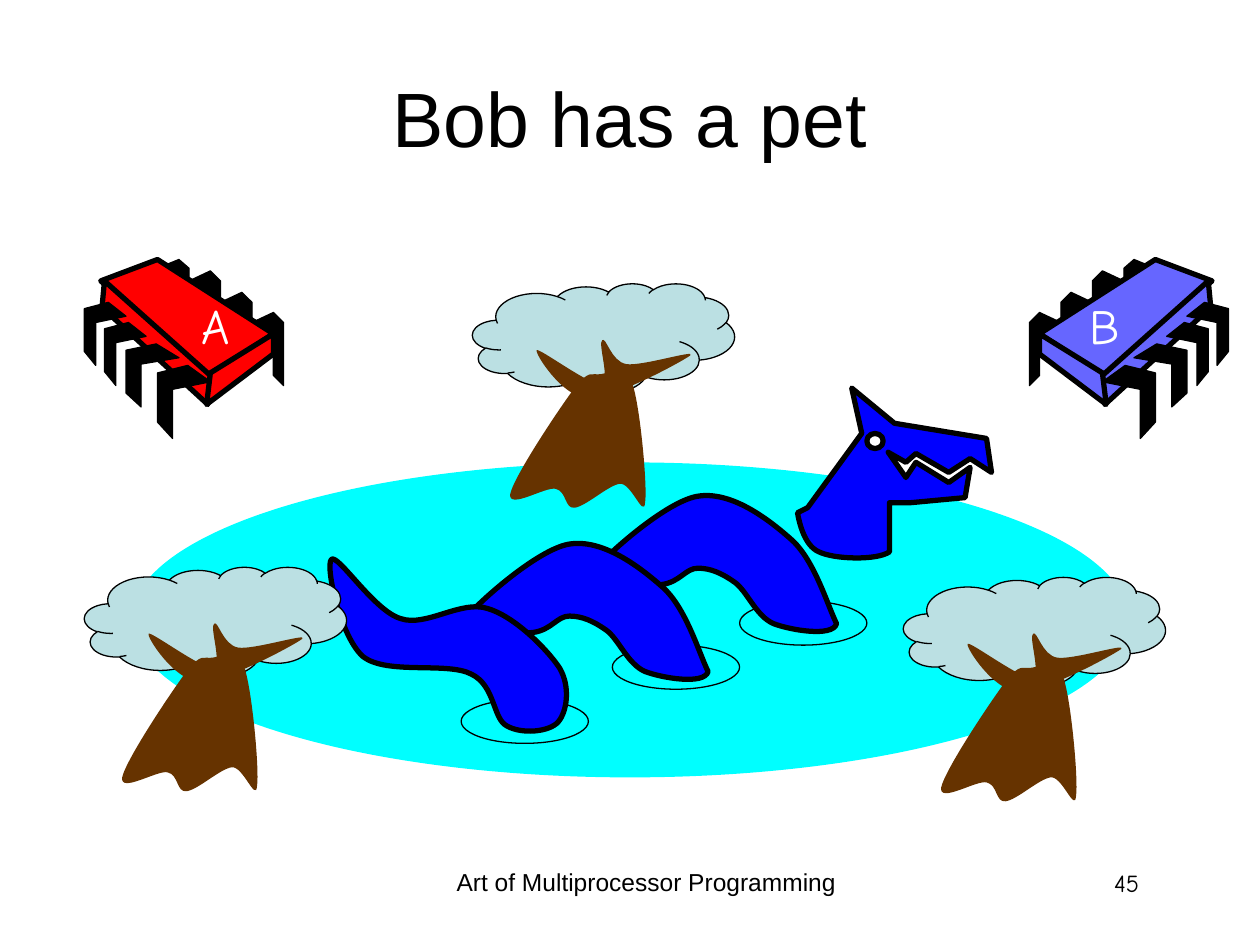
import pptx
import pptx.util
import pptx.dml.color
import pptx.enum.shapes
import pptx.enum.text
import pptx.oxml.ns

RGB = pptx.dml.color.RGBColor
BLACK = RGB(0x00, 0x00, 0x00)
WHITE = RGB(0xFF, 0xFF, 0xFF)
RED = RGB(0xFF, 0x00, 0x00)
VIOLET = RGB(0x66, 0x66, 0xFF)
CYAN = RGB(0x00, 0xFF, 0xFF)
BLUE = RGB(0x00, 0x00, 0xFF)
LEAF = RGB(0xBB, 0xE0, 0xE3)
BARK = RGB(0x66, 0x33, 0x00)

KIND = pptx.enum.shapes.MSO_SHAPE
ALIGN = pptx.enum.text.PP_ALIGN
FIT = pptx.enum.text.MSO_AUTO_SIZE
MIDDLE = pptx.enum.text.MSO_ANCHOR.MIDDLE

SCALE = 9144
WIDTH, HEIGHT = 1000, 750
MIRROR = 1042
THIN, THICK = 0.75, 3
SANS, COMIC = "Arial", "Comic Neue"

REAR_LEG = [(0, 0), (17, -8), (25, 0), (25, 50), (17, 42), (17, 9), (0, 17)]
REAR_SPOTS = [(200, 256, 1), (175, 240, 1), (150, 223, 1), (125, 213, 0.86)]
FRONT_LEG = [(24, 0), (42, 13), (12, 19), (12, 58), (0, 45), (0, 6)]
FRONT_SPOTS = [(125, 290, 1, 1), (100, 273, 1, 0.86),
               (83, 256, 0.79, 0.86), (67, 240, 0.79, 0.86)]
CHIP_FACES = [
    [(125, 206), (217, 265), (165, 299), (80, 223)],
    [(83, 223), (167, 298), (165, 321), (81, 244)],
    [(217, 265), (217, 281), (164, 321), (167, 296)],
]
HUMP = [
    (664, 495), (661, 506, 627, 500, 614, 495), (600, 489, 593, 469, 583, 462),
    (573, 455, 564, 451, 554, 451), (544, 451, 540, 462, 525, 464),
    (511, 465, 461, 472, 466, 460), (471, 449, 526, 399, 553, 394),
    (580, 389, 610, 412, 629, 429), (647, 446, 657, 481, 664, 495),
]
HEAD = [
    (641, 403), (684, 344), (676, 308), (710, 336), (783, 348), (787, 375),
    (770, 364), (753, 375), (727, 360), (719, 367), (705, 359), (719, 379),
    (727, 367), (753, 383), (770, 371), (766, 395), (723, 399), (706, 399),
    (706, 438), (696, 445, 662, 444, 650, 438), (638, 433, 634, 413, 633, 407),
]
TAIL = [
    (263, 444), (268, 439, 297, 485, 318, 491), (338, 498, 366, 476, 387, 483),
    (408, 489, 434, 515, 444, 530), (453, 545, 450, 565, 443, 573),
    (436, 581, 414, 583, 402, 576), (391, 570, 393, 544, 374, 535),
    (355, 525, 307, 536, 288, 521), (270, 505, 258, 449, 263, 444),
]
TRUNK = [
    (456, 308), (468, 293, 469, 298, 477, 297), (484, 296, 496, 288, 502, 305),
    (508, 322, 514, 386, 512, 399), (511, 412, 501, 383, 492, 384),
    (483, 385, 465, 402, 456, 403), (448, 404, 450, 390, 441, 388),
    (433, 386, 403, 405, 405, 392), (408, 378, 444, 324, 456, 308),
]
BRANCH = [
    (426, 278), (424, 280, 446, 315, 466, 316), (487, 317, 543, 286, 548, 282),
    (553, 277, 509, 291, 497, 289), (485, 287, 481, 267, 478, 270),
    (474, 272, 485, 303, 477, 305), (468, 306, 428, 276, 426, 278),
]


class Pen:
    def __init__(self, deck):
        self.slide = deck.slides.add_slide(deck.slide_layouts[5])
        self.shapes = self.slide.shapes

    def place(self, item, box):
        item.left, item.top, item.width, item.height = [n * SCALE for n in box]

    def letter(self, frame, words, font, size, color, align):
        frame.text = words
        line = frame.paragraphs[0]
        line.alignment = align
        line.font.name = font
        line.font.size = pptx.util.Pt(size)
        line.font.color.rgb = color

    def title(self, words, box):
        item = self.shapes.title
        self.place(item, box)
        frame = item.text_frame
        frame.vertical_anchor = MIDDLE
        frame.auto_size = FIT.NONE
        self.letter(frame, words, SANS, 44, BLACK, ALIGN.CENTER)

    def label(self, words, box, font, size, color, align, wrap=True):
        item = self.shapes.add_textbox(*[n * SCALE for n in box])
        frame = item.text_frame
        frame.word_wrap = wrap
        frame.auto_size = FIT.NONE if wrap else FIT.SHAPE_TO_FIT_TEXT
        self.letter(frame, words, font, size, color, align)

    def paint(self, item, fill, width):
        item.shadow.inherit = False
        if fill is None:
            item.fill.background()
        else:
            item.fill.solid()
            item.fill.fore_color.rgb = fill
        if width:
            item.line.color.rgb = BLACK
            item.line.width = pptx.util.Pt(width)
        else:
            item.line.fill.background()
        return item

    def preset(self, kind, box, fill=None, width=0):
        item = self.shapes.add_shape(kind, *[n * SCALE for n in box])
        return self.paint(item, fill, width)

    def outline(self, steps, fill, width=0, dx=0, dy=0):
        dots = [dot for step in steps for dot in zip(step[::2], step[1::2])]
        maker = self.shapes.build_freeform(*dots[0], scale=SCALE)
        maker.add_line_segments(dots[1:], close=True)
        item = maker.convert_to_shape(dx * SCALE, dy * SCALE)
        parts = iter(list(item._element.iter(pptx.oxml.ns.qn("a:lnTo"))))
        for step in steps[1:]:
            first = next(parts)
            if len(step) == 6:
                first.tag = pptx.oxml.ns.qn("a:cubicBezTo")
                for part in (next(parts), next(parts)):
                    first.append(part[0])
                    part.getparent().remove(part)
        return self.paint(item, fill, width)

    def chip(self, fill, flip=False):
        def turn(dots):
            return [(MIRROR - x if flip else x, y) for x, y in dots]

        rear = [[(x + a, y + round(b * tall)) for a, b in REAR_LEG]
                for x, y, tall in REAR_SPOTS]
        front = [[(x + round(a * wide), y + round(b * tall)) for a, b in FRONT_LEG]
                 for x, y, wide, tall in FRONT_SPOTS]
        items = [self.outline(turn(leg), BLACK, THIN) for leg in rear]
        items += [self.outline(turn(face), fill, THICK) for face in CHIP_FACES]
        items += [self.outline(turn(leg), BLACK, THIN) for leg in front]
        self.shapes.add_group_shape(items)

    def tree(self, dx, dy):
        crown = self.preset(KIND.CLOUD_CALLOUT, (375 + dx, 225 + dy, 208, 87), LEAF, THIN)
        crown.adjustments[0] = 0.02
        crown.adjustments[1] = 0.49
        wood = [self.outline(steps, BARK, dx=dx, dy=dy) for steps in (TRUNK, BRANCH)]
        self.shapes.add_group_shape([crown] + wood)


def main():
    deck = pptx.Presentation()
    deck.slide_width, deck.slide_height = WIDTH * SCALE, HEIGHT * SCALE
    pen = Pen(deck)
    pen.label("45", (706, 684, 208, 50), COMIC, 14, BLACK, ALIGN.RIGHT)
    pen.title("Bob has a pet", (50, 30, 900, 125))
    pen.chip(RED)
    pen.chip(VIOLET, flip=True)
    pen.preset(KIND.OVAL, (104, 367, 792, 250), CYAN)
    for name, left, wide in (("A", 143, 49), ("B", 854, 45)):
        pen.label(name, (left, 230, wide, 57), COMIC, 28, WHITE, ALIGN.RIGHT, wrap=False)
    for left, top in ((486, 512), (366, 555), (587, 477)):
        pen.preset(KIND.OVAL, (left, top, 101, 35), width=THIN)
    for dx, dy in ((0, 0), (-102, 38)):
        pen.outline(HUMP, BLUE, THICK, dx, dy)
    pen.outline(HEAD, BLUE, THICK)
    pen.preset(KIND.OVAL, (688, 344, 13, 12), WHITE, THICK)
    pen.outline(TAIL, BLUE, THICK)
    for dx, dy in ((0, 0), (342, 233), (-308, 225)):
        pen.tree(dx, dy)
    pen.label("Art of Multiprocessor Programming", (342, 683, 342, 52),
              SANS, 14, BLACK, ALIGN.CENTER)
    deck.save("out.pptx")


if __name__ == "__main__":
    main()
